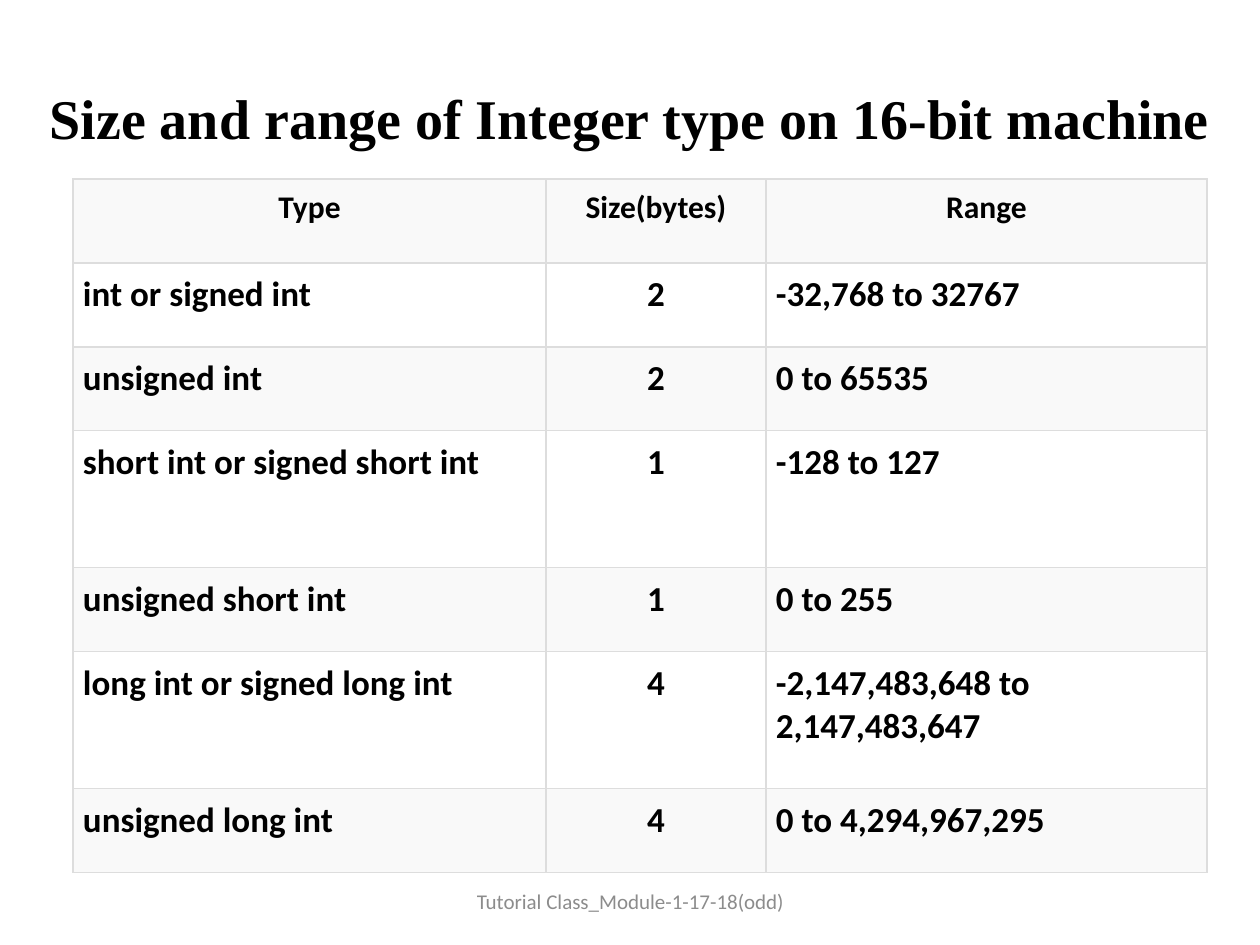
from dataclasses import dataclass

from lxml.etree import SubElement
from pptx import Presentation
from pptx.dml.color import RGBColor
from pptx.enum.text import MSO_ANCHOR, PP_ALIGN
from pptx.oxml.ns import qn
from pptx.util import Emu, Pt

PX_PER_INCH = 126
COLORS = {"text": "000000", "footer": "8C8C8C", "border": "DDDDDD",
          "band": "F9F9F9", "plain": "FFFFFF"}


@dataclass
class TypeRow:
    name: str
    size: str
    range: str
    height: int = 84


HEADER = TypeRow("Type", "Size(bytes)", "Range")
TYPES = [
    TypeRow("int or signed int", "2", "-32,768 to 32767"),
    TypeRow("unsigned int", "2", "0 to 65535"),
    TypeRow("short int or signed short int", "1", "-128 to 127", 137),
    TypeRow("unsigned short int", "1", "0 to 255"),
    TypeRow("long int or signed long int", "4", "-2,147,483,648 to 2,147,483,647", 137),
    TypeRow("unsigned long int", "4", "0 to 4,294,967,295"),
]
COLUMN_WIDTHS = [473, 220, 441]


def px(n: int) -> Emu:
    return Emu(round(n * 914400 / PX_PER_INCH))


def rgb(name: str) -> RGBColor:
    return RGBColor.from_string(COLORS[name])


def write(tf, text: str, size: int, font: str = "Calibri", color: str = "text",
          bold: bool = True, align=PP_ALIGN.CENTER) -> None:
    tf.word_wrap = True
    p = tf.paragraphs[0]
    p.alignment = align
    r = p.add_run()
    r.text = text
    r.font.name = font
    r.font.size = Pt(size)
    r.font.bold = bold
    r.font.color.rgb = rgb(color)


def place(sp, left: int, top: int, width: int, height: int) -> None:
    sp.left, sp.top, sp.width, sp.height = map(px, (left, top, width, height))


def add_borders(cell) -> None:
    tc_pr = cell._tc.get_or_add_tcPr()
    for i, side in enumerate(("lnL", "lnR", "lnT", "lnB")):
        ln = tc_pr.makeelement(qn(f"a:{side}"), {"w": str(Pt(0.75))})
        fill = SubElement(ln, qn("a:solidFill"))
        SubElement(fill, qn("a:srgbClr"), val=COLORS["border"])
        tc_pr.insert(i, ln)  # borders come before the fill


def fill_cell(cell, text: str, size: int, fill: str, align) -> None:
    cell.margin_left = cell.margin_right = px(10)
    cell.margin_top = cell.margin_bottom = px(10)
    cell.vertical_anchor = MSO_ANCHOR.TOP
    cell.fill.solid()
    cell.fill.fore_color.rgb = rgb(fill)
    write(cell.text_frame, text, size, align=align)
    add_borders(cell)


def add_type_table(s, left: int, top: int) -> None:
    rows = [HEADER, *TYPES]
    height = sum(row.height for row in rows)
    table = s.shapes.add_table(len(rows), len(COLUMN_WIDTHS), px(left), px(top),
                               px(sum(COLUMN_WIDTHS)), px(height)).table
    for column, width in zip(table.columns, COLUMN_WIDTHS):
        column.width = px(width)
    for i, row in enumerate(rows):
        table.rows[i].height = px(row.height)
        for j, text in enumerate((row.name, row.size, row.range)):
            centred = i == 0 or j == 1
            fill_cell(table.cell(i, j), text, 18 if i == 0 else 20,
                      "plain" if i % 2 else "band",
                      PP_ALIGN.CENTER if centred else PP_ALIGN.LEFT)


def main() -> None:
    prs = Presentation()
    prs.slide_width, prs.slide_height = px(1260), px(945)
    s = prs.slides.add_slide(prs.slide_layouts[5])

    # Title
    title = s.shapes.title
    place(title, 21, 38, 1218, 158)
    title.text_frame.vertical_anchor = MSO_ANCHOR.MIDDLE
    write(title.text_frame, "Size and range of Integer type on 16-bit machine",
          32, font="Times New Roman")

    # Integer types
    add_type_table(s, 73, 179)

    # Footer
    footer = s.shapes.add_textbox(px(431), px(876), px(399), px(50))
    footer.text_frame.vertical_anchor = MSO_ANCHOR.MIDDLE
    write(footer.text_frame, "Tutorial Class_Module-1-17-18(odd)", 12,
          color="footer", bold=False)

    prs.save("out.pptx")


if __name__ == "__main__":
    main()
